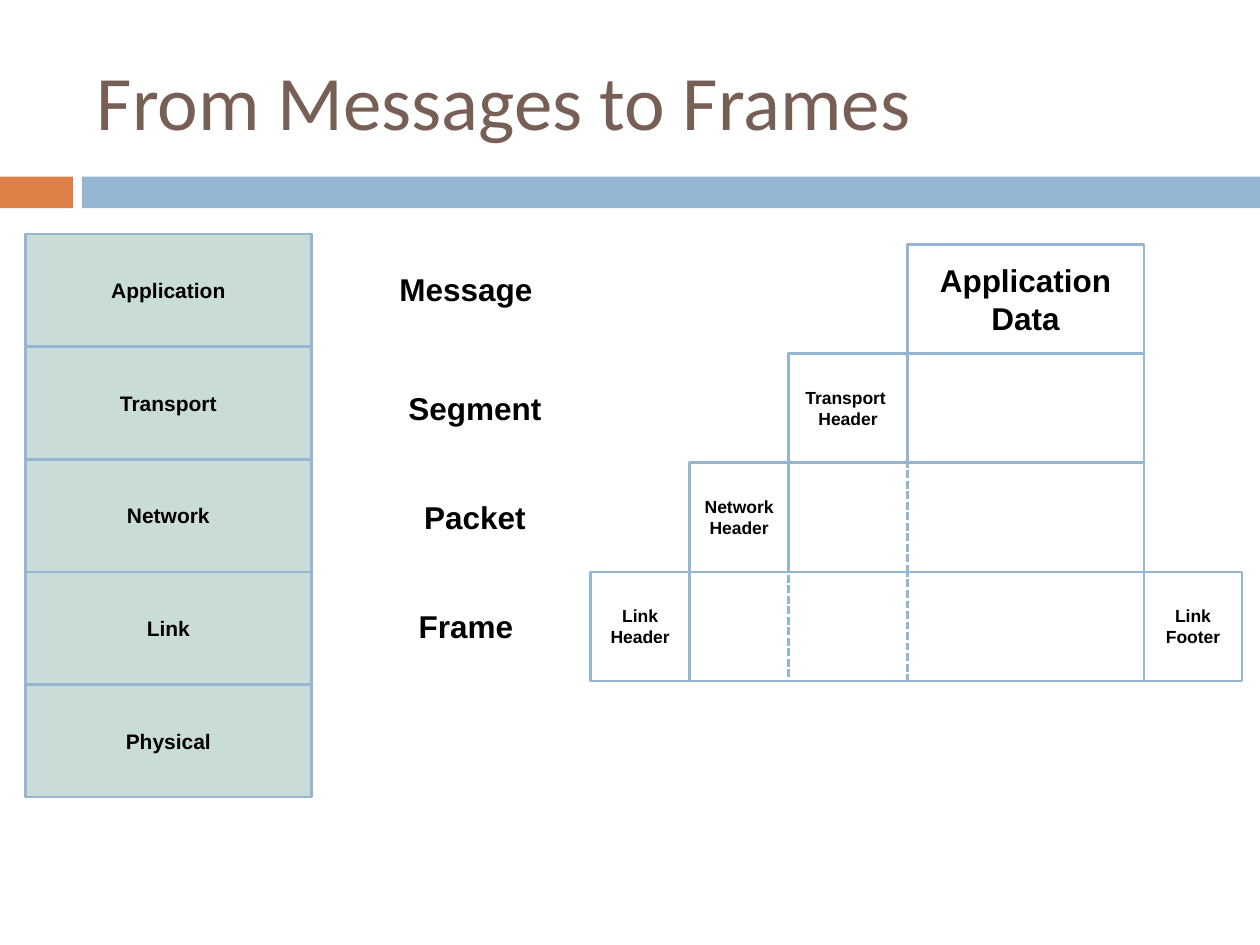
from dataclasses import dataclass
from typing import Optional

from pptx import Presentation
from pptx.dml.color import RGBColor
from pptx.enum.dml import MSO_LINE
from pptx.enum.shapes import MSO_SHAPE
from pptx.enum.text import MSO_ANCHOR, MSO_AUTO_SIZE, PP_ALIGN
from pptx.util import Cm, Pt

RECTANGLE = MSO_SHAPE.RECTANGLE
DASHED = MSO_LINE.SQUARE_DOT
MIDDLE = MSO_ANCHOR.MIDDLE
NO_AUTOFIT = MSO_AUTO_SIZE.NONE
LEFT, CENTER = PP_ALIGN.LEFT, PP_ALIGN.CENTER

COLORS = {
    "accent": "DD8047",
    "blue": "94B6D2",
    "layer": "CADCD8",
    "title": "775F55",
    "text": "000000",
}

# Edges of the frame's fields, from link header to link footer, in cm
FIELD_EDGES = (11.91, 13.9, 15.9, 18.29, 23.06, 25.04)
FIELD_TOP, FIELD_HEIGHT = 4.93, 2.2
LAYER_LEFT, LAYER_TOP, LAYER_WIDTH, LAYER_HEIGHT = 0.51, 4.72, 5.77, 2.27
LAYERS = ("Application", "Transport", "Network", "Link", "Physical")


@dataclass
class Box:
    """A rectangle with lengths in cm."""
    left: float
    top: float
    width: float
    height: float
    text: str = ""
    size: int = 18
    fill: Optional[str] = None
    line: Optional[str] = "blue"
    dashed: bool = False


@dataclass
class Field:
    """A part of a data unit, spanning field edges start to end on one row."""
    row: int
    start: int
    end: int
    text: str = ""
    size: int = 10
    dashed: bool = False


FIELDS = (
    Field(0, 3, 4, "Application Data", 18),
    Field(1, 2, 3, "Transport \nHeader"),
    Field(2, 2, 4),
    Field(3, 1, 4),
    Field(1, 3, 4),
    Field(2, 1, 2, "Network\nHeader"),
    Field(3, 0, 1, "Link\nHeader"),
    Field(3, 4, 5, "Link Footer"),
    Field(2, 2, 3, dashed=True),
    Field(3, 2, 3, dashed=True),
)

UNIT_NAMES = (
    Box(7.11, 5.13, 4.57, 1.4, "Message"),
    Box(7.29, 7.52, 4.57, 1.4, "Segment"),
    Box(7.29, 9.73, 4.57, 1.4, "Packet"),
    Box(7.11, 11.91, 4.57, 1.4, "Frame"),
)


def color(name: str) -> RGBColor:
    return RGBColor.from_string(COLORS[name])


def set_text(shape, text: str, size: int, font_name: str = "Arial",
             color_name: str = "text", bold: bool = True, alignment=CENTER) -> None:
    frame = shape.text_frame
    frame.text = text
    frame_format = {"word_wrap": True, "auto_size": NO_AUTOFIT, "vertical_anchor": MIDDLE}
    for name, value in frame_format.items():
        setattr(frame, name, value)
    font_format = {"name": font_name, "size": Pt(size), "bold": bold}
    for paragraph in frame.paragraphs:
        paragraph.alignment = alignment
        for run in paragraph.runs:
            for name, value in font_format.items():
                setattr(run.font, name, value)
            run.font.color.rgb = color(color_name)


def add_box(shapes, box: Box) -> None:
    place = map(Cm, (box.left, box.top, box.width, box.height))
    shape = shapes.add_shape(RECTANGLE, *place)
    shape.shadow.inherit = False
    if box.fill:
        shape.fill.solid()
        shape.fill.fore_color.rgb = color(box.fill)
    else:
        shape.fill.background()
    if box.line:
        shape.line.color.rgb = color(box.line)
        shape.line.width = Pt(1.5)
        if box.dashed:
            shape.line.dash_style = DASHED
    else:
        shape.line.fill.background()
    if box.text:
        set_text(shape, box.text, box.size)


def add_label(shapes, label: Box) -> None:
    place = map(Cm, (label.left, label.top, label.width, label.height))
    set_text(shapes.add_textbox(*place), label.text, label.size)


def add_field(shapes, field: Field) -> None:
    left, right = FIELD_EDGES[field.start], FIELD_EDGES[field.end]
    top = FIELD_TOP + field.row * FIELD_HEIGHT
    add_box(shapes, Box(left, top, right - left, FIELD_HEIGHT,
                        field.text, field.size, dashed=field.dashed))


def format_title(title) -> None:
    place = {"left": 1.7, "top": 0.64, "width": 22.66, "height": 2.74}
    for name, value in place.items():
        setattr(title, name, Cm(value))
    set_text(title, "From Messages to Frames", 44, "Calibri", "title", False, LEFT)


def main() -> None:
    presentation = Presentation()
    presentation.slide_width, presentation.slide_height = Cm(25.4), Cm(19.05)
    slide = presentation.slides.add_slide(presentation.slide_layouts[5])
    format_title(slide.shapes.title)

    add_box(slide.shapes, Box(0, 3.56, 1.47, 0.64, fill="accent", line=None))
    add_box(slide.shapes, Box(1.65, 3.56, 23.75, 0.64, fill="blue", line=None))

    for label in UNIT_NAMES:
        add_label(slide.shapes, label)

    encapsulation = slide.shapes.add_group_shape()
    for field in FIELDS:
        add_field(encapsulation.shapes, field)

    layer_stack = slide.shapes.add_group_shape()
    for row, name in enumerate(LAYERS):
        top = LAYER_TOP + row * LAYER_HEIGHT
        add_box(layer_stack.shapes, Box(LAYER_LEFT, top, LAYER_WIDTH, LAYER_HEIGHT,
                                        name, 12, fill="layer"))

    presentation.save("out.pptx")


if __name__ == "__main__":
    main()
